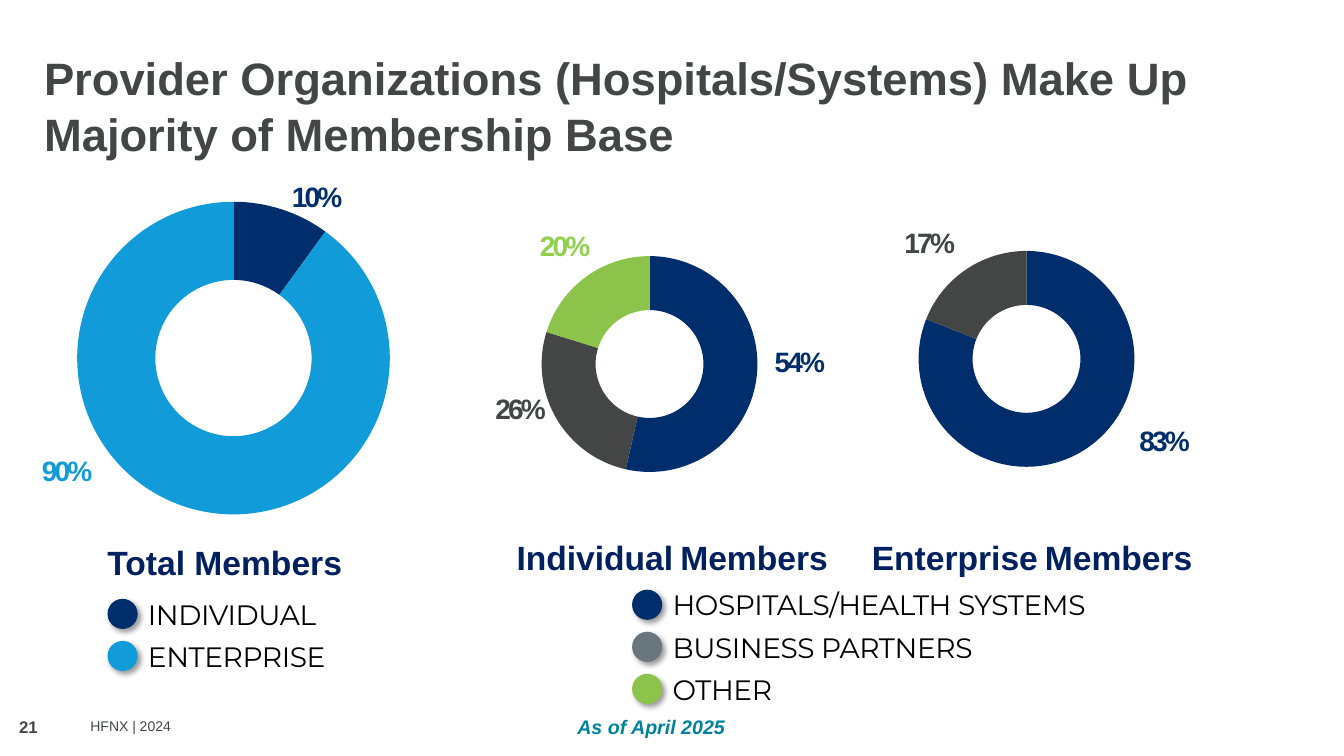
import pptx
import pptx.util
import pptx.chart.data
import pptx.dml.color
import pptx.enum.chart
import pptx.enum.shapes
import pptx.enum.text
from lxml import etree

Cm, Pt = pptx.util.Cm, pptx.util.Pt
RGBColor = pptx.dml.color.RGBColor
ALIGN = pptx.enum.text.PP_ALIGN
ANCHOR = pptx.enum.text.MSO_ANCHOR

# Colours
NAVY = RGBColor(0x00, 0x2E, 0x6D)
INK = RGBColor(0x00, 0x20, 0x60)
GREY = RGBColor(0x44, 0x45, 0x45)
SLATE = RGBColor(0x69, 0x76, 0x7D)
SKY = RGBColor(0x11, 0x9C, 0xD9)
TEAL = RGBColor(0x00, 0x82, 0x9C)
GREEN = RGBColor(0x8C, 0xC3, 0x4B)
LIME = RGBColor(0x92, 0xD0, 0x50)
BLACK = RGBColor(0, 0, 0)

# Content: all lengths in cm
TITLE = "Provider Organizations (Hospitals/Systems) Make Up Majority of Membership Base"
NUMBER, FOOTER, DATE = "21", "HFNX | 2024", "As of April 2025"

FIVE = (NAVY, GREY, SKY, TEAL, GREEN)
RINGS = [  # box, ring width, values, colours
    ((13.13, 6.1, 6.48, 6.15), 5.44, (53, 26, 0, 0, 20), FIVE),
    ((22.63, 5.97, 6.48, 6.15), 5.44, (81, 19, 0, 0, 0), FIVE),
    ((1.35, 4.72, 9.07, 8.61), 7.88, (10, 90), (NAVY, SKY)),
]
HEADS = [  # left, top, width, words
    (1.93, 13.74, 7.47, ["Total Members"]),
    (12.29, 13.61, 9.3, ["Individual", " ", "Members"]),
    (21.36, 13.61, 9.3, ["Enterprise", " ", "Members"]),
]
SHARES = [  # centre, top, label, colour
    (14.24, 5.64, "20%", LIME),
    (29.35, 10.54, "83%", NAVY),
    (20.16, 8.56, "54%", NAVY),
    (23.43, 5.56, "17%", GREY),
    (13.12, 9.75, "26%", GREY),
    (7.99, 4.39, "10%", NAVY),
    (1.69, 11.3, "90%", SKY),
]
KEYS = [  # left, top, entries
    (2.71, 15.09, [("INDIVIDUAL", NAVY), ("ENTERPRISE", SKY)]),
    (15.93, 14.86, [("HOSPITALS/HEALTH SYSTEMS", NAVY),
                    ("BUSINESS PARTNERS", SLATE), ("OTHER", GREEN)]),
]
DOT, STEP, GAP, ROW = 0.76, 1.06, 1.02, 1.2

deck = pptx.Presentation()
deck.slide_width, deck.slide_height = Cm(33.87), Cm(19.05)
slide = deck.slides.add_slide(deck.slide_layouts[6])


def add_text(box, words, size, color, face="Arial", bold=True, track=0):
    shape = slide.shapes.add_textbox(*map(Cm, box))
    shape.text_frame.word_wrap = True
    para = shape.text_frame.paragraphs[0]
    for word in words:
        run = para.add_run()
        run.text = word
        if track:
            run._r.get_or_add_rPr().set("spc", str(track))
    font = para.font
    font.name, font.size, font.bold = face, Pt(size), bold
    font.color.rgb = color
    return shape.text_frame, para


def add_ring(box, width, values, colors):
    data = pptx.chart.data.CategoryChartData()
    data.categories = [str(i + 1) for i in range(len(values))]
    data.add_series("Series 1", values)
    chart = slide.shapes.add_chart(
        pptx.enum.chart.XL_CHART_TYPE.DOUGHNUT, *map(Cm, box), data).chart
    chart.has_legend = chart.has_title = False
    chart.font.name, chart.font.size = "Calibri", Pt(10)
    chart.font.color.rgb = BLACK
    plot = chart.plots[0]
    plot.vary_by_categories = True
    for i, color in enumerate(colors):
        fill = plot.series[0].points[i].format.fill
        fill.solid()
        fill.fore_color.rgb = color
    # Hole size and a centred plot area
    plot._element.find("{*}holeSize").set("val", "60")
    area = chart._chartSpace.chart.plotArea
    for old in area.findall("{*}layout"):
        area.remove(old)
    space = etree.QName(area).namespace
    layout = etree.Element(f"{{{space}}}layout")
    manual = etree.SubElement(layout, f"{{{space}}}manualLayout")
    w, h = width / box[2], width / box[3]
    for tag, val in [("layoutTarget", "inner"), ("xMode", "edge"), ("yMode", "edge"),
                     ("x", (1 - w) / 2), ("y", (1 - h) / 2), ("w", w), ("h", h)]:
        etree.SubElement(manual, f"{{{space}}}{tag}").set("val", str(val))
    area.insert(0, layout)


def add_dot(left, top, color):
    dot = slide.shapes.add_shape(
        pptx.enum.shapes.MSO_SHAPE.OVAL, Cm(left), Cm(top), Cm(DOT), Cm(DOT))
    dot.fill.solid()
    dot.fill.fore_color.rgb = color
    dot.line.fill.background()
    dot.shadow.inherit = False
    # Soft shadow to the lower right
    glow = dot._element.spPr.find("{*}effectLst")
    space = etree.QName(glow).namespace
    drop = etree.SubElement(glow, f"{{{space}}}outerShdw", blurRad=str(Pt(4)),
                            dist=str(Pt(3)), dir="2700000", algn="tl", rotWithShape="0")
    tint = etree.SubElement(drop, f"{{{space}}}srgbClr", val=str(BLACK))
    etree.SubElement(tint, f"{{{space}}}alpha", val="40000")


# Title and footer
_, para = add_text((0.86, 1.09, 31.85, 2.31), [TITLE], 32.4, GREY)
para.line_spacing = 1.03
add_text((0.23, 17.93, 1.14, 0.76), [NUMBER], 12, GREY)
add_text((2.03, 17.96, 26.29, 0.69), [FOOTER], 10, GREY, bold=False)
_, para = add_text((14.3, 17.96, 4.98, 1.02), [DATE], 14, TEAL)
para.font.italic = True
para.line_spacing = 0.9

# Rings with their headings and shares
for ring in RINGS:
    add_ring(*ring)
for left, top, width, words in HEADS:
    _, para = add_text((left, top, width, 1.07), words, 24, INK)
    para.alignment, para.line_spacing = ALIGN.CENTER, Pt(23)
    for run in para.runs:
        if run.text == " ":
            run.font.size = Pt(18)
for mid, top, label, color in SHARES:
    _, para = add_text((mid - 1.4, top, 2.8, 1.12), [label], 20, color, track=-200)
    para.alignment = ALIGN.CENTER

# Keys
for left, top, items in KEYS:
    for i, (label, color) in enumerate(items):
        y = top + i * STEP
        add_dot(left, y, color)
        frame, _ = add_text((left + GAP, y + (DOT - ROW) / 2, 12, ROW), [label], 20,
                            BLACK, "Montserrat", False, -30)
        frame.vertical_anchor = ANCHOR.MIDDLE
        frame.margin_left = frame.margin_right = 0
        frame.margin_top = frame.margin_bottom = 0

deck.save("out.pptx")
